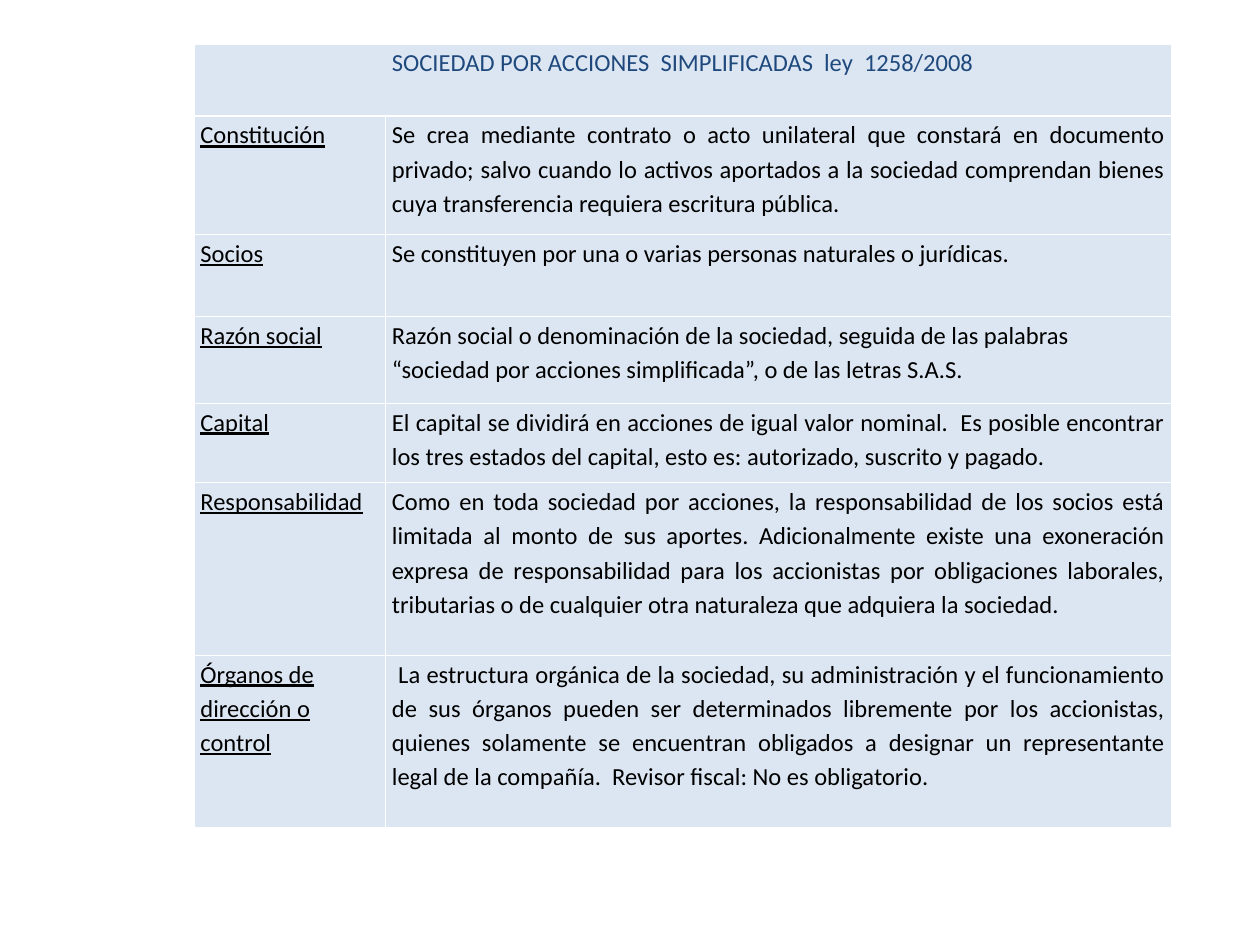
from dataclasses import dataclass

from lxml import etree
from pptx import Presentation
from pptx.dml.color import RGBColor
from pptx.enum.text import PP_ALIGN
from pptx.oxml.ns import qn
from pptx.table import Table, _Cell
from pptx.util import Cm, Pt

LEFT, CENTER, JUSTIFY = PP_ALIGN.LEFT, PP_ALIGN.CENTER, PP_ALIGN.JUSTIFY


@dataclass(frozen=True)
class Theme:
    font: str = "Calibri"
    size: float = 14
    line_spacing: float = 1.15
    space_after: float = 10
    text: str = "000000"
    title: str = "1F497D"
    fill: str = "DCE6F2"
    border: str = "FFFFFF"
    border_width: float = 1
    outline_width: float = 0.83


@dataclass(frozen=True)
class Topic:
    label: str
    description: str
    height: float
    space_after: float = 0
    label_alignment: PP_ALIGN = JUSTIFY
    alignment: PP_ALIGN = JUSTIFY


THEME = Theme()
TITLE = "SOCIEDAD POR ACCIONES  SIMPLIFICADAS  ley  1258/2008"
TITLE_HEIGHT = 1.45
COLUMN_WIDTHS = (3.86, 15.85)
TABLE_LEFT, TABLE_TOP = 3.91, 0.89

TOPICS = (
    Topic(
        "Constitución",
        "Se crea mediante contrato o acto unilateral que constará en documento "
        "privado; salvo cuando lo activos aportados a la sociedad comprendan "
        "bienes cuya transferencia requiera escritura pública. ",
        2.39,
    ),
    Topic(
        "Socios",
        "Se constituyen por una o varias personas naturales o jurídicas. ",
        1.65,
    ),
    Topic(
        "Razón social",
        "Razón social o denominación de la sociedad, seguida de las palabras "
        "“sociedad por acciones simplificada”, o de las letras S.A.S.",
        1.75,
        space_after=7.5,
        alignment=LEFT,
    ),
    Topic(
        "Capital",
        "El capital se dividirá en acciones de igual valor nominal.  Es posible "
        "encontrar los tres estados del capital, esto es: autorizado, suscrito "
        "y pagado.",
        1.6,
    ),
    Topic(
        "Responsabilidad",
        "Como en toda sociedad por acciones, la responsabilidad de los socios "
        "está limitada al monto de sus aportes. Adicionalmente existe una "
        "exoneración expresa de responsabilidad para los accionistas por "
        "obligaciones laborales, tributarias o de cualquier otra naturaleza "
        "que adquiera la sociedad. ",
        3.48,
        space_after=THEME.space_after,
    ),
    Topic(
        "Órganos de dirección o control",
        " La estructura orgánica de la sociedad, su administración y el "
        "funcionamiento de sus órganos pueden ser determinados libremente por "
        "los accionistas, quienes solamente se encuentran obligados a designar "
        "un representante legal de la compañía.  Revisor fiscal: No es "
        "obligatorio.",
        3.48,
        space_after=THEME.space_after,
        label_alignment=LEFT,
    ),
)


def make_line(tag: str, width: float, color: str) -> etree._Element:
    line = etree.Element(qn(tag), w=str(int(Pt(width))))
    solid = etree.SubElement(line, qn("a:solidFill"))
    etree.SubElement(solid, qn("a:srgbClr"), val=color)
    return line


def style_cell(cell: _Cell) -> None:
    cell.margin_left = cell.margin_right = Cm(0.13)
    cell.margin_top = cell.margin_bottom = 0
    cell.fill.solid()
    cell.fill.fore_color.rgb = RGBColor.from_string(THEME.fill)
    properties = cell._tc.get_or_add_tcPr()
    for position, side in enumerate("LRTB"):
        border = make_line(f"a:ln{side}", THEME.border_width, THEME.border)
        properties.insert(position, border)


def write_cell(
    cell: _Cell,
    text: str,
    alignment: PP_ALIGN,
    space_after: float = THEME.space_after,
    color: str = THEME.text,
    underline: bool = False,
    outlined: bool = False,
) -> None:
    paragraph = cell.text_frame.paragraphs[0]
    paragraph.alignment = alignment
    paragraph.line_spacing = THEME.line_spacing
    paragraph.space_after = Pt(space_after)
    run = paragraph.add_run()
    run.text = text
    run.font.name = THEME.font
    run.font.size = Pt(THEME.size)
    run.font.underline = underline
    run.font.color.rgb = RGBColor.from_string(color)
    if outlined:
        outline = make_line("a:ln", THEME.outline_width, color)
        run._r.get_or_add_rPr().insert(0, outline)


def fill_table(table: Table) -> None:
    table.first_row = table.horz_banding = False
    for column, width in zip(table.columns, COLUMN_WIDTHS):
        column.width = Cm(width)
    heights = (TITLE_HEIGHT, *(topic.height for topic in TOPICS))
    for row, height in zip(table.rows, heights):
        row.height = Cm(height)
    for cell in table.iter_cells():
        style_cell(cell)

    title_cell = table.cell(0, 0)
    title_cell.merge(table.cell(0, 1))
    write_cell(title_cell, TITLE, CENTER, color=THEME.title, outlined=True)
    for row_index, topic in enumerate(TOPICS, start=1):
        write_cell(
            table.cell(row_index, 0), topic.label, topic.label_alignment,
            underline=True,
        )
        write_cell(
            table.cell(row_index, 1), topic.description, topic.alignment,
            topic.space_after,
        )


def main() -> None:
    presentation = Presentation()
    presentation.slide_width, presentation.slide_height = Cm(25.4), Cm(19.05)
    slide = presentation.slides.add_slide(presentation.slide_layouts[6])
    total_height = TITLE_HEIGHT + sum(topic.height for topic in TOPICS)
    shape = slide.shapes.add_table(
        len(TOPICS) + 1, len(COLUMN_WIDTHS), Cm(TABLE_LEFT), Cm(TABLE_TOP),
        Cm(sum(COLUMN_WIDTHS)), Cm(total_height),
    )
    fill_table(shape.table)
    presentation.save("out.pptx")


if __name__ == "__main__":
    main()
